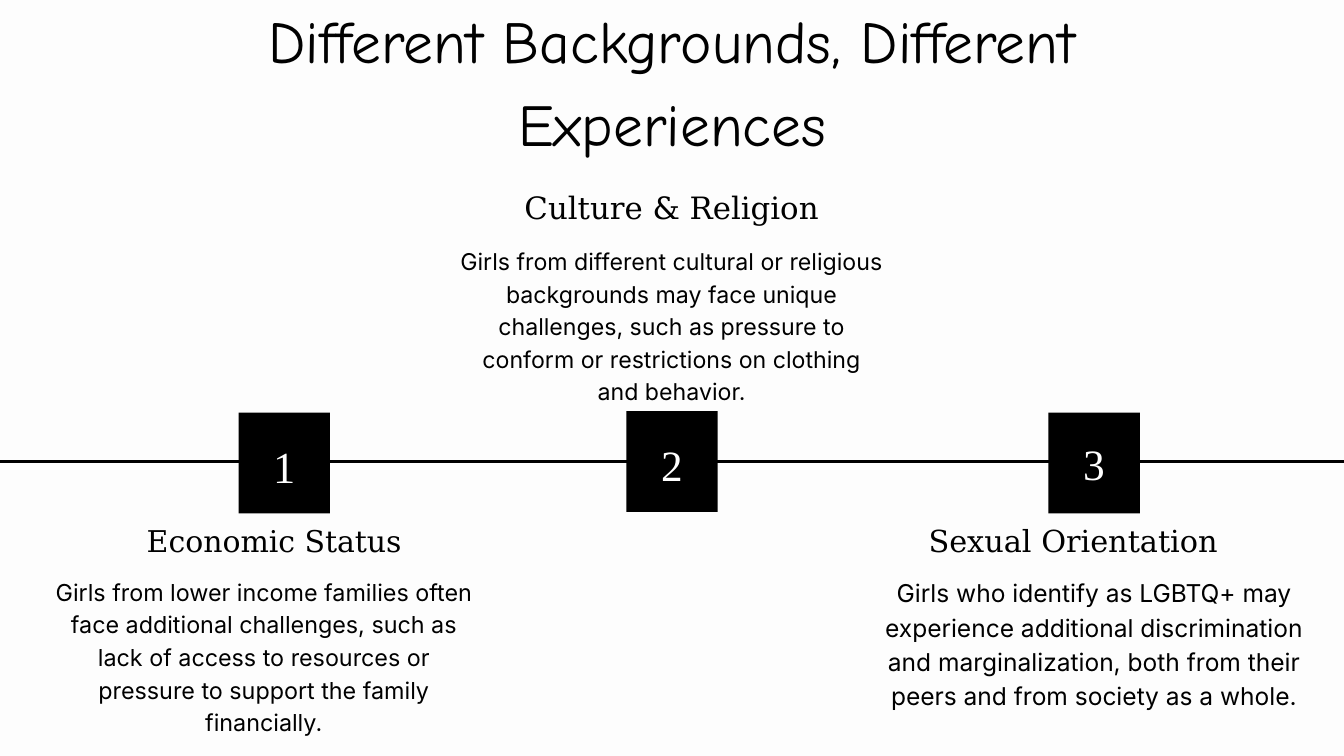
from lxml import etree
from pptx import Presentation
from pptx.dml.color import RGBColor
from pptx.enum import shapes, text
from pptx.oxml import ns
from pptx.util import Pt

BLACK = RGBColor(0x00, 0x00, 0x00)
WHITE = RGBColor(0xFF, 0xFF, 0xFF)
PAPER = RGBColor(0xFD, 0xFD, 0xFD)

SLIDE_WIDTH, SLIDE_HEIGHT = 1440, 810
TITLE = "Different Backgrounds, Different Experiences"
TITLE_BOX = (222.5, -8.6, 995, 174.2)
LINE_Y, LINE_LENGTH, LINE_COUNT = 494.6, 511.2, 3
MARKER_WIDTH, MARKER_HEIGHT = 98, 108

TOPICS = [
    {
        "marker": (255.6, 442),
        "number": ("1", 460.8, 47.6, 66.7),
        "heading": ("Economic Status", (142.6, 553, 302.4, 45), 32.1, 45),
        "body": (
            "Girls from lower income families often face additional challenges, such as "
            "lack of access to resources or pressure to support the family financially.",
            (54, 614.2, 457.2, 171.4), 25, 35,
        ),
    },
    {
        "marker": (671, 440.6),
        "number": ("2", 460, 46.3, 64.8),
        "heading": ("Culture & Religion", (545.8, 195.8, 347.8, 46.8), 33, 46.2),
        "body": (
            "Girls from different cultural or religious backgrounds may face unique "
            "challenges, such as pressure to conform or restrictions on clothing and behavior.",
            (493.2, 260.6, 452.9, 206), 24.8, 34.7,
        ),
    },
    {
        "marker": (1123.2, 442),
        "number": ("3", 458.6, 46.4, 65),
        "heading": ("Sexual Orientation", (963.4, 553, 373, 45.4), 32.5, 45.5),
        "body": (
            "Girls who identify as LGBTQ+ may experience additional discrimination and "
            "marginalization, both from their peers and from society as a whole.",
            (923, 614.2, 498.2, 181.4), 26.3, 36.8,
        ),
    },
]


def write_text(shape, content, size, leading, font_name, color=BLACK):
    frame = shape.text_frame
    frame.text = content
    frame.word_wrap = True
    frame.auto_size = text.MSO_AUTO_SIZE.NONE
    frame.vertical_anchor = text.MSO_ANCHOR.TOP
    frame.margin_left = frame.margin_right = frame.margin_top = frame.margin_bottom = 0
    paragraph = frame.paragraphs[0]
    paragraph.alignment = text.PP_ALIGN.CENTER
    paragraph.line_spacing = Pt(leading)
    paragraph.space_before = Pt(0)
    font = paragraph.runs[0].font
    font.name, font.size, font.color.rgb = font_name, Pt(size), color


def add_text(slide, content, box, size, leading, font_name, color=BLACK):
    shape = slide.shapes.add_textbox(*map(Pt, box))
    write_text(shape, content, size, leading, font_name, color)


def add_title(slide):
    title = slide.shapes.title
    title.left, title.top, title.width, title.height = map(Pt, TITLE_BOX)
    write_text(title, TITLE, 63.6, 89, "Comic Neue")


def add_timeline(slide):
    step = (SLIDE_WIDTH - LINE_LENGTH) / (LINE_COUNT - 1)
    for index in range(LINE_COUNT):
        start = index * step
        line = slide.shapes.add_connector(
            shapes.MSO_CONNECTOR.STRAIGHT,
            Pt(start), Pt(LINE_Y), Pt(start + LINE_LENGTH), Pt(LINE_Y),
        )
        line.line.color.rgb = BLACK
        line.line.width = Pt(3)
        etree.SubElement(line._element.spPr, ns.qn("a:effectLst"))


def add_topic(slide, topic):
    left, top = topic["marker"]
    marker = slide.shapes.add_shape(
        shapes.MSO_SHAPE.RECTANGLE, Pt(left), Pt(top), Pt(MARKER_WIDTH), Pt(MARKER_HEIGHT)
    )
    marker.shadow.inherit = False
    marker.fill.solid()
    marker.fill.fore_color.rgb = BLACK
    marker.line.fill.background()

    number, number_top, size, leading = topic["number"]
    number_box = (left, number_top, MARKER_WIDTH, leading)
    add_text(slide, number, number_box, size, leading, "Times New Roman", WHITE)
    add_text(slide, *topic["heading"], "DejaVu Serif")
    add_text(slide, *topic["body"], "Inter")


def main():
    presentation = Presentation()
    presentation.slide_width, presentation.slide_height = Pt(SLIDE_WIDTH), Pt(SLIDE_HEIGHT)
    slide = presentation.slides.add_slide(presentation.slide_layouts.get_by_name("Title Only"))
    slide.background.fill.solid()
    slide.background.fill.fore_color.rgb = PAPER
    add_title(slide)
    add_timeline(slide)
    for topic in TOPICS:
        add_topic(slide, topic)
    presentation.save("out.pptx")


if __name__ == "__main__":
    main()
